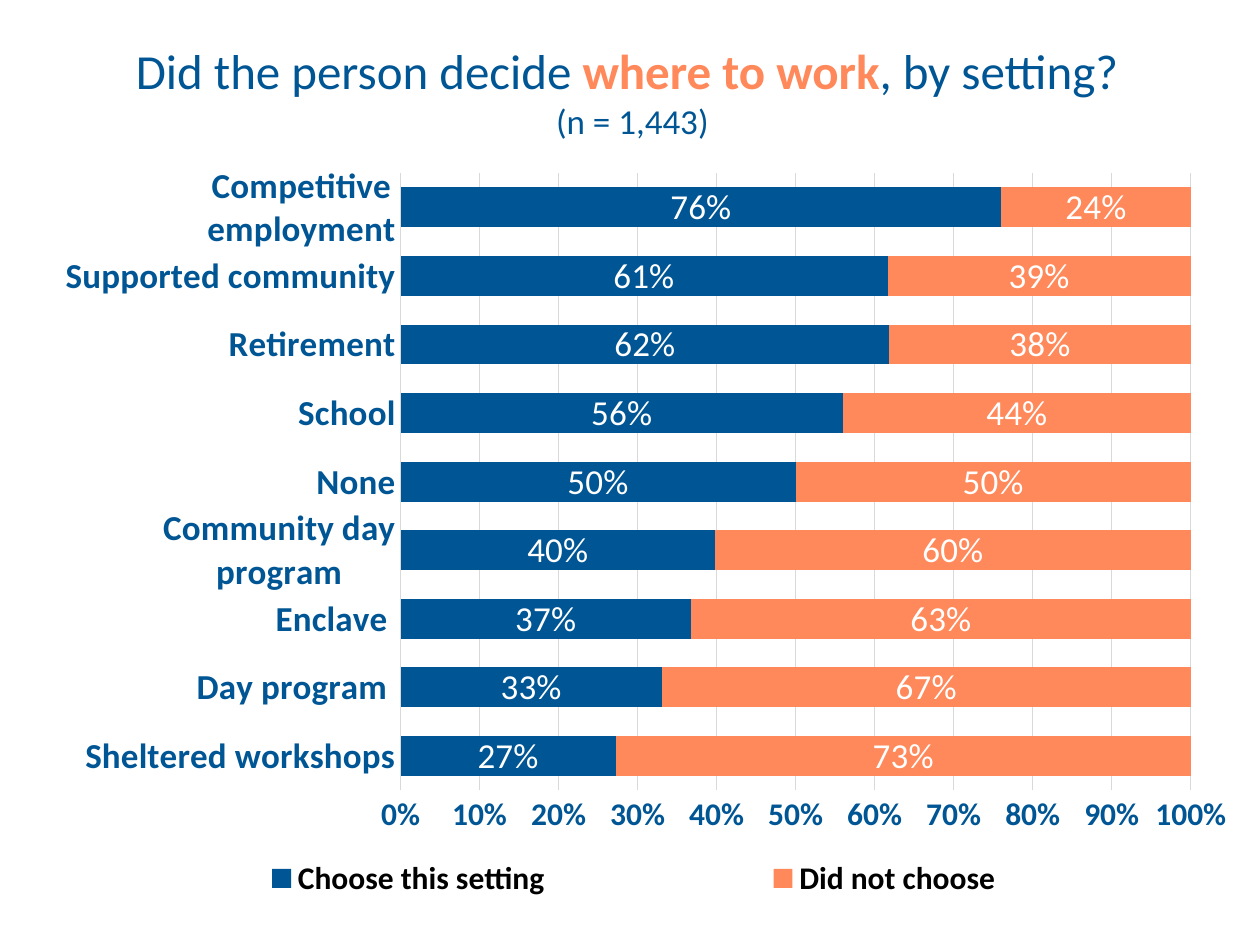
import lxml.etree
import pptx
import pptx.chart.data
import pptx.dml.color
import pptx.enum.chart
import pptx.enum.text
import pptx.oxml.ns
import pptx.util

Cm = pptx.util.Cm
Pt = pptx.util.Pt
BLUE = pptx.dml.color.RGBColor(0x00, 0x56, 0x94)
ORANGE = pptx.dml.color.RGBColor(0xFF, 0x89, 0x5A)
GRAY = pptx.dml.color.RGBColor(0xD9, 0xD9, 0xD9)
WHITE = pptx.dml.color.RGBColor(0xFF, 0xFF, 0xFF)
BLACK = pptx.dml.color.RGBColor(0x00, 0x00, 0x00)
FONT = "Calibri"

SETTINGS = [
    ("Sheltered workshops", 79, 211, 27),
    ("Day program ", 217, 439, 33),
    ("Enclave ", 32, 55, 37),
    ("Community day program", 276, 417, 40),
    ("None", 50, 50, 50),
    ("School", 14, 11, 56),
    ("Retirement", 73, 45, 62),
    ("Supported community", 106, 66, 61),
    ("Competitive employment", 92, 29, 76),
]


def format_font(font, size, color, bold=False):
    font.name = FONT
    font.size = Pt(size)
    font.bold = bold
    font.color.rgb = color


def set_layout(parent, position, box, inner=False):
    for old_layout in parent.findall(pptx.oxml.ns.qn("c:layout")):
        parent.remove(old_layout)
    layout = lxml.etree.Element(pptx.oxml.ns.qn("c:layout"))
    manual = lxml.etree.SubElement(layout, pptx.oxml.ns.qn("c:manualLayout"))
    settings = [("layoutTarget", "inner")] if inner else []
    settings += [("xMode", "edge"), ("yMode", "edge")]
    settings += zip("xywh", box)
    for name, value in settings:
        element = lxml.etree.SubElement(manual, pptx.oxml.ns.qn("c:" + name))
        element.set("val", str(value))
    parent.insert(position, layout)


def place_title(slide, left, top, width, height):
    title = slide.shapes.title
    title.left, title.top, title.width, title.height = left, top, width, height
    frame = title.text_frame
    frame.word_wrap = True
    frame.auto_size = pptx.enum.text.MSO_AUTO_SIZE.NONE
    frame.vertical_anchor = pptx.enum.text.MSO_ANCHOR.TOP
    paragraph = frame.paragraphs[0]
    paragraph.alignment = pptx.enum.text.PP_ALIGN.CENTER
    paragraph.text = "Did the person decide "
    paragraph.add_run().text = "where to work"
    paragraph.add_run().text = ", by setting? "
    paragraph.add_line_break()
    paragraph.add_run().text = "(n = 1,443)"
    question, emphasis, ending, sample = paragraph.runs
    format_font(question.font, 28, BLUE)
    format_font(emphasis.font, 28, ORANGE, True)
    format_font(ending.font, 28, BLUE)
    format_font(sample.font, 20, BLUE)


def format_series(series, color, percentages):
    series.format.fill.solid()
    series.format.fill.fore_color.rgb = color
    labels = series.data_labels
    labels.show_value = True
    labels.position = pptx.enum.chart.XL_LABEL_POSITION.CENTER
    format_font(labels.font, 20, WHITE)
    for index, percentage in enumerate(percentages):
        label = series.points[index].data_label
        label.text_frame.text = f"{percentage}%"
        format_font(label.text_frame.paragraphs[0].runs[0].font, 20, WHITE)
        label.position = pptx.enum.chart.XL_LABEL_POSITION.CENTER


def format_axes(chart):
    for axis, size in ((chart.category_axis, 20), (chart.value_axis, 18)):
        axis.major_tick_mark = pptx.enum.chart.XL_TICK_MARK.NONE
        axis.minor_tick_mark = pptx.enum.chart.XL_TICK_MARK.NONE
        format_font(axis.tick_labels.font, size, BLUE, True)
    values = chart.value_axis
    values.minimum_scale, values.maximum_scale, values.major_unit = 0, 1, 0.1
    values.tick_labels.number_format = "0%"
    values.tick_labels.number_format_is_linked = False
    values.format.line.fill.background()
    values.has_major_gridlines = True
    for line in (chart.category_axis.format.line, values.major_gridlines.format.line):
        line.color.rgb = GRAY
        line.width = Pt(0.75)


def place_chart(slide, left, top, width, height):
    names, chosen, not_chosen, shares = zip(*SETTINGS)
    data = pptx.chart.data.CategoryChartData()
    data.categories = names
    data.add_series("Choose this setting", chosen)
    data.add_series("Did not choose", not_chosen)
    chart = slide.shapes.add_chart(
        pptx.enum.chart.XL_CHART_TYPE.BAR_STACKED_100, left, top, width, height, data
    ).chart
    chart.has_title = False
    format_font(chart.font, 10, BLACK)
    plot = chart.plots[0]
    plot.gap_width, plot.overlap = 72, 100
    plot.vary_by_categories = False
    format_series(plot.series[0], BLUE, shares)
    format_series(plot.series[1], ORANGE, [100 - share for share in shares])
    format_axes(chart)
    chart.has_legend = True
    legend = chart.legend
    legend.position = pptx.enum.chart.XL_LEGEND_POSITION.BOTTOM
    legend.include_in_layout = False
    format_font(legend.font, 18, BLACK, True)
    set_layout(chart._chartSpace.chart.plotArea, 0, (0.297, 0.032, 0.654, 0.812), True)
    set_layout(legend._element, 1, (0.01, 0.92, 0.96, 0.08))


def main():
    presentation = pptx.Presentation()
    presentation.slide_width, presentation.slide_height = Cm(25.4), Cm(19.05)
    slide = presentation.slides.add_slide(presentation.slide_layouts[5])
    place_title(slide, Cm(0.05), Cm(0.69), Cm(25.4), Cm(2.31))
    place_chart(slide, Cm(0.84), Cm(3), Cm(24.36), Cm(15.32))
    presentation.save("out.pptx")


if __name__ == "__main__":
    main()
